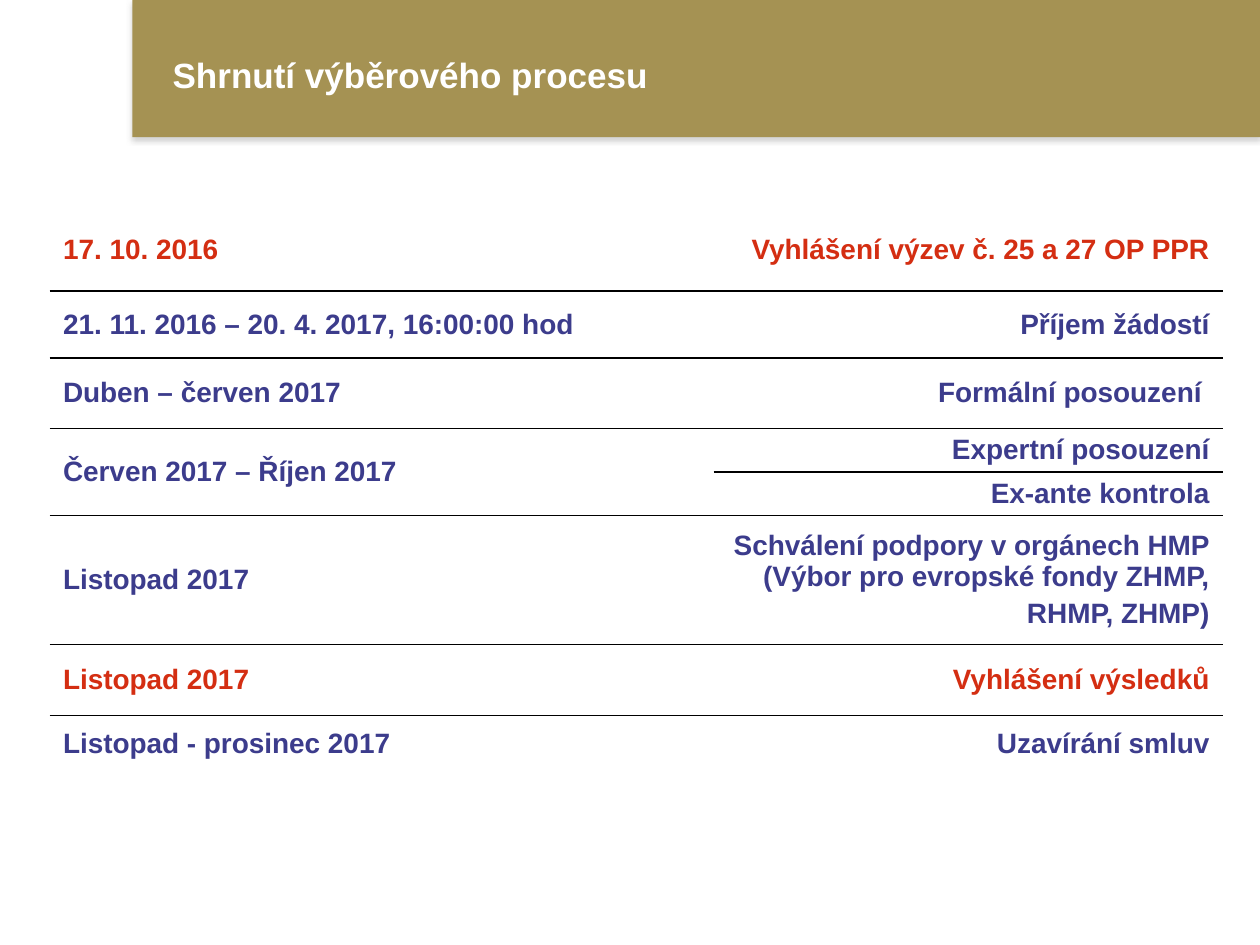
from dataclasses import dataclass

from lxml import etree
from pptx import Presentation
from pptx.dml.color import RGBColor
from pptx.enum.shapes import MSO_SHAPE
from pptx.enum.text import MSO_ANCHOR, PP_ALIGN
from pptx.oxml import parse_xml
from pptx.oxml.ns import nsdecls, qn
from pptx.util import Inches, Pt

RECTANGLE = MSO_SHAPE.RECTANGLE
MIDDLE = MSO_ANCHOR.MIDDLE
LEFT, RIGHT = PP_ALIGN.LEFT, PP_ALIGN.RIGHT

SLIDE_WIDTH, SLIDE_HEIGHT = Inches(10), Inches(7.5)
FONT = "Arial"
GOLD, WHITE, BLACK = "A59253", "FFFFFF", "000000"
NAVY, RED = "3C3C8C", "D42E12"


@dataclass
class Step:
    """One row of the schedule; an empty date continues the cell above."""
    date: str
    event: list[str]
    height: float  # percent of the slide height
    color: str = NAVY


STEPS = [
    Step("17. 10. 2016", ["Vyhlášení výzev č. 25 a 27 OP PPR"], 8.8, RED),
    Step("21. 11. 2016 – 20. 4. 2017, 16:00:00 hod", ["Příjem žádostí"], 7.07),
    Step("Duben – červen 2017", ["Formální posouzení "], 7.47),
    Step("Červen 2017 – Říjen 2017", ["Expertní posouzení"], 4.6),
    Step("", ["Ex-ante kontrola"], 4.6),
    Step("Listopad 2017",
         ["Schválení podpory v orgánech HMP (Výbor pro evropské fondy ZHMP,",
          "RHMP, ZHMP)"], 13.7),
    Step("Listopad 2017", ["Vyhlášení výsledků"], 7.47, RED),
    Step("Listopad - prosinec 2017", ["Uzavírání smluv"], 6),
]
COLUMN_SHARES = (52.7, 40.3)


def across(percent: float) -> int:
    return int(SLIDE_WIDTH * percent / 100)


def down(percent: float) -> int:
    return int(SLIDE_HEIGHT * percent / 100)


def rgb(hex_color: str) -> RGBColor:
    return RGBColor.from_string(hex_color)


def format_text(frame, size: float, color: str, align) -> None:
    for index, paragraph in enumerate(frame.paragraphs):
        paragraph.alignment = align
        paragraph.space_before = Pt(0.2 * size if index else 0)
        for run in paragraph.runs:
            run.font.name = FONT
            run.font.size = Pt(size)
            run.font.bold = True
            run.font.color.rgb = rgb(color)


def add_band(slide) -> None:
    band = slide.shapes.add_shape(
        RECTANGLE, across(10.5), 0, across(89.5), down(14.53))
    band.fill.solid()
    band.fill.fore_color.rgb = rgb(GOLD)
    band.line.fill.background()
    band.shadow.inherit = False
    effects = band._element.spPr.find(qn("a:effectLst"))
    effects.append(parse_xml(
        f'<a:outerShdw {nsdecls("a")} blurRad="{Pt(3.1)}" dist="{Pt(1.8)}" '
        'dir="5400000" rotWithShape="0"><a:srgbClr val="808080">'
        '<a:alpha val="35000"/></a:srgbClr></a:outerShdw>'))
    # The band lies behind the title
    slide.shapes._spTree.insert(2, band._element)


def set_title(slide, text: str) -> None:
    title = slide.shapes.title
    title.left, title.top = across(12.7), down(-1.47)
    title.width, title.height = across(84.2), down(19.33)
    frame = title.text_frame
    frame.text = text
    frame.vertical_anchor = MIDDLE
    frame.paragraphs[0].line_spacing = 0.9
    format_text(frame, 20, WHITE, LEFT)


def rule_edge(cell, edge: str) -> None:
    """Draw a thin black rule on the given edge, ahead of the cell's fill."""
    line = parse_xml(
        f'<a:{edge} {nsdecls("a")} w="{Pt(1)}"><a:solidFill>'
        f'<a:srgbClr val="{BLACK}"/></a:solidFill></a:{edge}>')
    properties = cell._tc.get_or_add_tcPr()
    rules = [child for child in properties
             if etree.QName(child).localname.startswith("ln")]
    properties.insert(len(rules), line)


def fill_cell(cell, text: str, color: str, align) -> None:
    cell.fill.background()
    cell.vertical_anchor = MIDDLE
    cell.margin_left = cell.margin_right = Inches(0.1)
    cell.margin_top = cell.margin_bottom = Inches(0.04)
    cell.text_frame.text = text
    format_text(cell.text_frame, 16, color, align)


def add_schedule(slide, steps: list[Step]) -> None:
    table = slide.shapes.add_table(
        len(steps), len(COLUMN_SHARES), across(4), down(22),
        across(sum(COLUMN_SHARES)),
        down(sum(step.height for step in steps))).table
    table.first_row = table.horz_banding = False
    for column, share in zip(table.columns, COLUMN_SHARES):
        column.width = across(share)

    for row, step in enumerate(steps):
        table.rows[row].height = down(step.height)
        date_cell, event_cell = table.cell(row, 0), table.cell(row, 1)
        fill_cell(date_cell, step.date, step.color, LEFT)
        fill_cell(event_cell, "\n".join(step.event), step.color, RIGHT)

        # Rules run between rows, never through a continued date
        for cell in (date_cell, event_cell):
            if row > 0 and (step.date or cell is event_cell):
                rule_edge(cell, "lnT")
            continued = row + 1 < len(steps) and not steps[row + 1].date
            if row + 1 < len(steps) and (cell is event_cell or not continued):
                rule_edge(cell, "lnB")

    for row, step in enumerate(steps):
        if not step.date:
            table.cell(row - 1, 0).merge(table.cell(row, 0))


def main() -> None:
    deck = Presentation()
    deck.slide_width, deck.slide_height = SLIDE_WIDTH, SLIDE_HEIGHT
    slide = deck.slides.add_slide(deck.slide_layouts[5])
    add_band(slide)
    set_title(slide, "Shrnutí výběrového procesu")
    add_schedule(slide, STEPS)
    deck.save("out.pptx")


if __name__ == "__main__":
    main()
